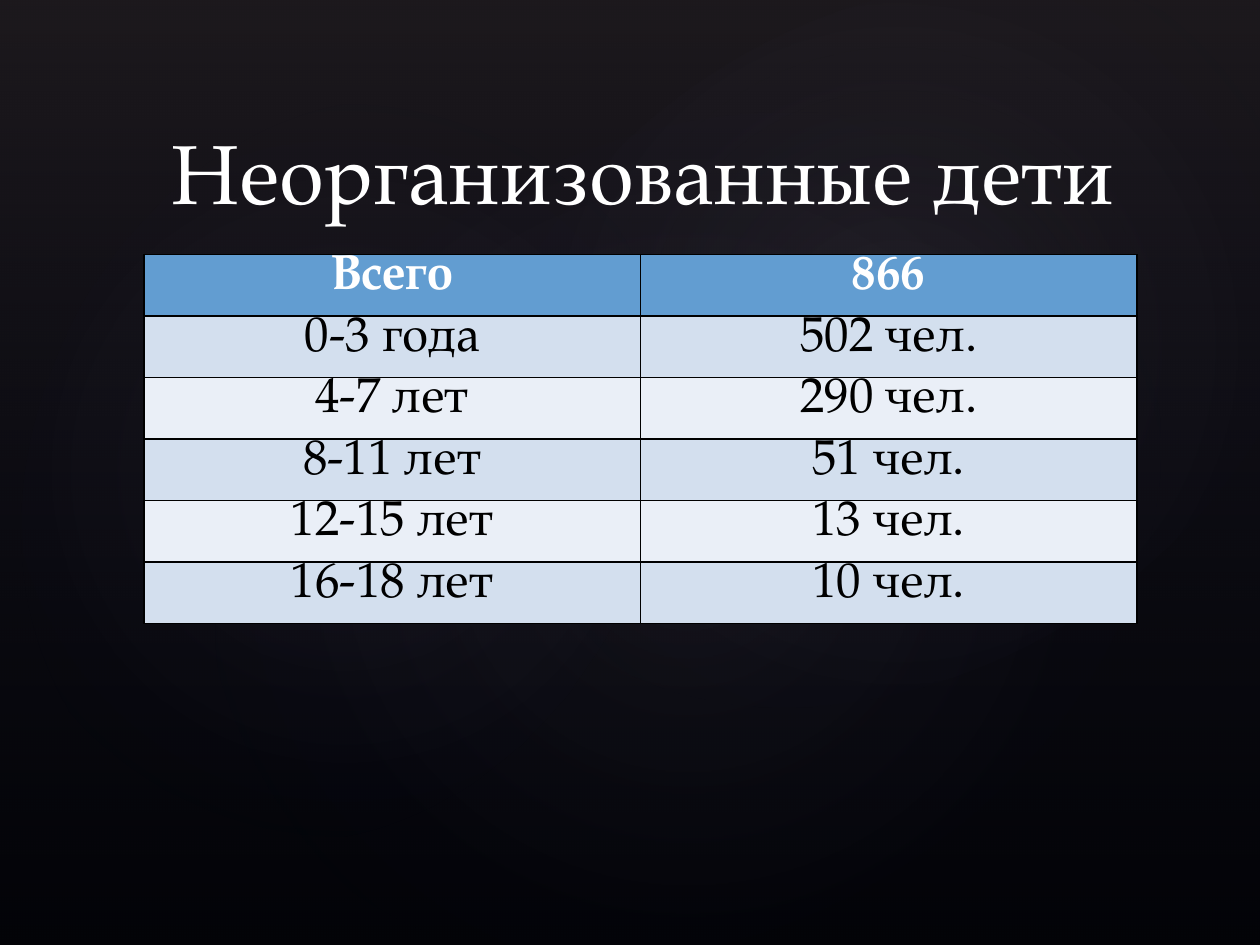
from lxml.etree import SubElement
from pptx import Presentation
from pptx.dml.color import RGBColor
from pptx.enum.shapes import MSO_SHAPE
from pptx.enum.text import MSO_ANCHOR, PP_ALIGN
from pptx.oxml.ns import qn
from pptx.util import Cm, Pt

ROWS = [
    ("Всего", "866"),
    ("0-3 года", "502 чел."),
    ("4-7 лет", "290 чел."),
    ("8-11 лет", "51 чел."),
    ("12-15 лет", "13 чел."),
    ("16-18 лет", "10 чел."),
]
# left, top, width, height in cm, rotation, opacity at the centre
GLOWS = [
    (3.81, 2.9, 20.12, 15.85, 328.7, 7),
    (-0.76, 3.25, 15.39, 12.45, 294.3, 8),
    (9.09, 0.33, 18.01, 13.21, 328.7, 8),
]


def color(value):
    return RGBColor.from_string(value)


def write(frame, text, size=28, fill="000000", bold=False, font="TeX Gyre Pagella"):
    paragraph = frame.paragraphs[0]
    paragraph.alignment = PP_ALIGN.CENTER
    run = paragraph.add_run()
    run.text = text
    run.font.name = font
    run.font.size = Pt(size)
    run.font.bold = bold
    run.font.color.rgb = color(fill)


def add_color(parent, value, opacity=100):
    node = SubElement(parent, qn("a:srgbClr"), val=value)
    if opacity < 100:
        SubElement(node, qn("a:alpha"), val=str(opacity * 1000))


class SlideBuilder:
    HEADER = "629DD1"
    BANDS = ("EAEFF7", "D3DFEE")
    BORDER = "000000"

    def __init__(self, presentation):
        self.slide = presentation.slides.add_slide(presentation.slide_layouts[5])
        fill = self.slide.background.fill
        fill.solid()
        fill.fore_color.rgb = color("000000")

    def gradient(self, kind, box, stops, rotation=0, radial=False):
        """Add a borderless shape; stops are (percent, colour, opacity)."""
        shape = self.slide.shapes.add_shape(kind, *map(Cm, box))
        shape.rotation = rotation
        shape.shadow.inherit = False
        shape.line.fill.background()
        shape.fill.gradient()
        node = shape.element.spPr.find(qn("a:gradFill"))
        for child in list(node):
            node.remove(child)
        stop_list = SubElement(node, qn("a:gsLst"))
        for percent, value, opacity in stops:
            stop = SubElement(stop_list, qn("a:gs"), pos=str(percent * 1000))
            add_color(stop, value, opacity)
        if radial:
            center = SubElement(node, qn("a:path"), path="circle")
            SubElement(center, qn("a:fillToRect"), l="50000", t="50000", r="50000", b="50000")
        else:
            SubElement(node, qn("a:lin"), ang="5400000", scaled="0")

    def title(self, text, box):
        title = self.slide.shapes.title
        title.left, title.top, title.width, title.height = map(Cm, box)
        frame = title.text_frame
        frame.word_wrap = True
        frame.vertical_anchor = MSO_ANCHOR.BOTTOM
        frame.margin_bottom = 0
        write(frame, text, size=48, fill="FFFFFF")
        # Bring the title in front of the backdrop
        title.element.getparent().append(title.element)

    def borders(self, cell):
        properties = cell._tc.get_or_add_tcPr()
        for position, side in enumerate(("lnL", "lnR", "lnT", "lnB")):
            line = SubElement(properties, qn(f"a:{side}"), w=str(Pt(1)))
            add_color(SubElement(line, qn("a:solidFill")), self.BORDER)
            properties.insert(position, line)

    def table(self, rows, left, top, width, row_height):
        table = self.slide.shapes.add_table(
            len(rows), len(rows[0]), Cm(left), Cm(top), Cm(width), Cm(row_height * len(rows))
        ).table
        for row_index, values in enumerate(rows):
            header = row_index == 0
            for column_index, text in enumerate(values):
                cell = table.cell(row_index, column_index)
                cell.margin_top = cell.margin_bottom = 0
                cell.fill.solid()
                cell.fill.fore_color.rgb = color(self.HEADER if header else self.BANDS[row_index % 2])
                write(cell.text_frame, text, fill="FFFFFF" if header else "000000", bold=header)
                self.borders(cell)


def main():
    presentation = Presentation()
    presentation.slide_width, presentation.slide_height = Cm(25.4), Cm(19.05)
    builder = SlideBuilder(presentation)
    builder.gradient(
        MSO_SHAPE.RECTANGLE, (0, 0, 25.4, 19.05), [(0, "504652", 36), (100, "242852", 10)]
    )
    for *box, rotation, opacity in GLOWS:
        stops = [(0, "C4BCC6", opacity), (58, "242852", 0)]
        builder.gradient(MSO_SHAPE.OVAL, box, stops, rotation, radial=True)
    builder.table(ROWS, left=2.9, top=5.13, width=20.02, row_height=1.24)
    builder.title("Неорганизованные дети", (2.49, 1.93, 20.96, 2.54))
    presentation.save("out.pptx")


if __name__ == "__main__":
    main()
